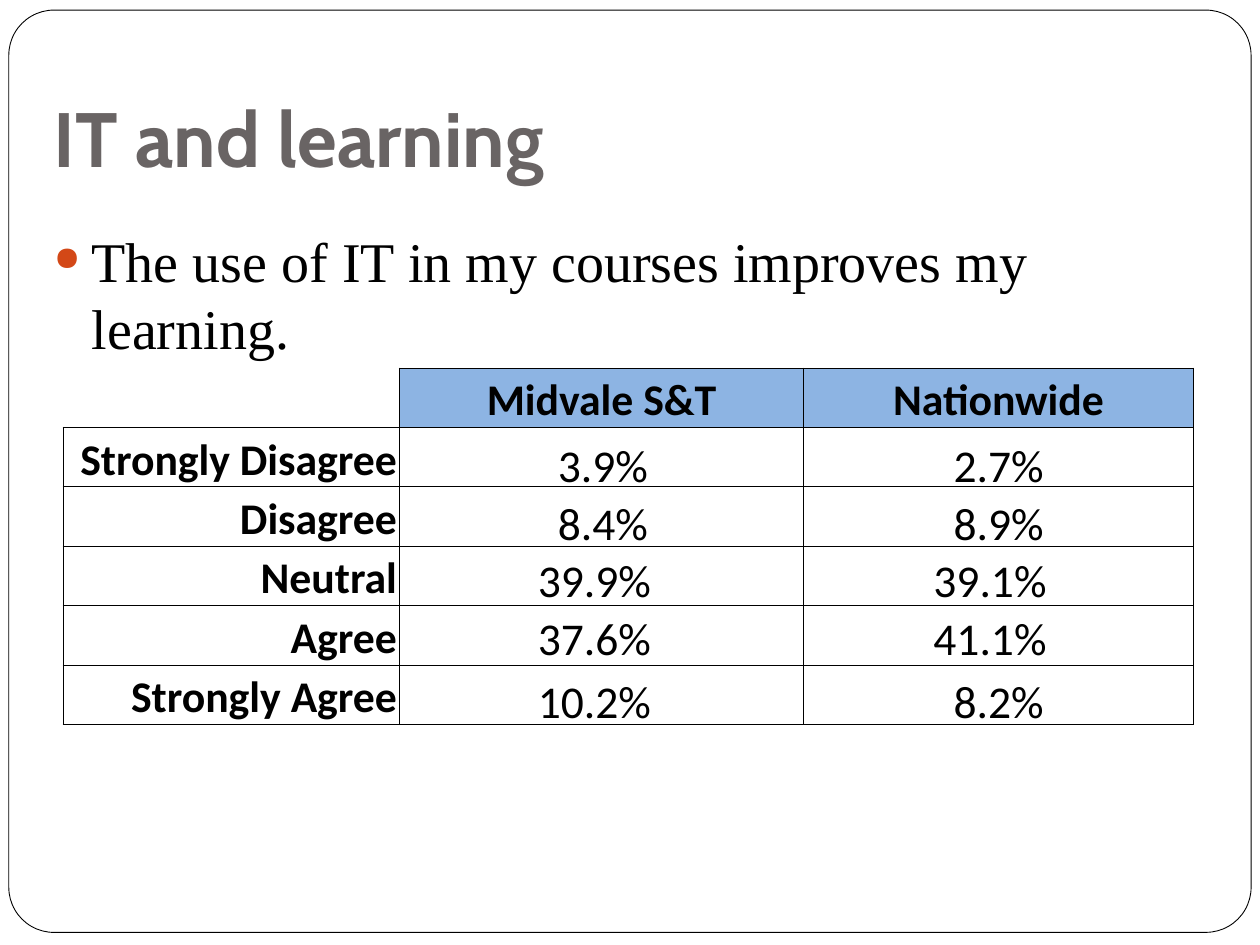
from dataclasses import dataclass

from lxml.etree import SubElement
from pptx import Presentation
from pptx.dml.color import RGBColor
from pptx.enum.shapes import MSO_SHAPE
from pptx.enum.text import MSO_ANCHOR, PP_ALIGN
from pptx.oxml.ns import qn
from pptx.util import Inches, Pt


@dataclass(frozen=True)
class Theme:
    background: str = "FFFFFF"
    ink: str = "000000"
    title: str = "696464"
    bullet: str = "D34817"
    header: str = "8DB4E3"
    title_size: float = 44
    body_size: float = 32
    label_size: float = 25
    value_size: float = 26
    line_width: float = 0.5


@dataclass(frozen=True)
class TextStyle:
    font: str
    size: float
    color: str
    bold: bool = False


@dataclass(frozen=True)
class Box:
    left: float
    top: float
    width: float
    height: float

    def lengths(self) -> list:
        return [Inches(value) for value in (self.left, self.top, self.width, self.height)]


@dataclass(frozen=True)
class Answer:
    label: str
    campus: str
    nationwide: str
    left: float
    top: float
    tab_stop: float


THEME = Theme()
TITLE = TextStyle("Cabin", THEME.title_size, THEME.title, True)
BODY = TextStyle("Times New Roman", THEME.body_size, THEME.ink)
LABEL = TextStyle("Calibri", THEME.label_size, THEME.ink, True)
VALUE = TextStyle("Calibri", THEME.value_size, THEME.ink)

HEADINGS = ("", "Midvale S&T", "Nationwide")
ANSWERS = (
    Answer("Strongly Disagree", "3.9%", "2.7%", 4.33, 3.42, 3.14),
    Answer("Disagree", "8.4%", "8.9%", 4.33, 3.88, 3.14),
    Answer("Neutral", "39.9%", "39.1%", 4.17, 4.33, 3.14),
    Answer("Agree", "37.6%", "41.1%", 4.17, 4.79, 3.14),
    Answer("Strongly Agree", "10.2%", "8.2%", 4.17, 5.29, 3.3),
)
COLUMN_WIDTHS = (2.67, 3.21, 3.09)
TABLE_BOX = Box(0.5, 2.92, sum(COLUMN_WIDTHS), 2.83)


def set_attributes(target, values: dict) -> None:
    for name, value in values.items():
        setattr(target, name, value)


def write(paragraph, text: str, style: TextStyle) -> None:
    run = paragraph.add_run()
    run.text = text
    set_attributes(run.font, {"name": style.font, "size": Pt(style.size), "bold": style.bold})
    run.font.color.rgb = RGBColor.from_string(style.color)


def add_frame(slide, box: Box) -> None:
    shape = slide.shapes.add_shape(MSO_SHAPE.ROUNDED_RECTANGLE, *box.lengths())
    shape.adjustments[0] = 0.049
    shape.shadow.inherit = False
    shape.fill.solid()
    shape.fill.fore_color.rgb = RGBColor.from_string(THEME.background)
    shape.line.color.rgb = RGBColor.from_string(THEME.ink)
    shape.line.width = Pt(THEME.line_width)


def add_text(slide, box: Box, text: str, style: TextStyle, frame_format: dict):
    text_frame = slide.shapes.add_textbox(*box.lengths()).text_frame
    set_attributes(text_frame, {"word_wrap": True, **frame_format})
    paragraph = text_frame.paragraphs[0]
    write(paragraph, text, style)
    return paragraph


def add_bullet(paragraph) -> None:
    paragraph.space_before = Pt(5.8)
    properties = paragraph._p.get_or_add_pPr()
    properties.set("marL", str(Inches(0.3)))
    properties.set("indent", str(-Inches(0.3)))
    color = SubElement(properties, qn("a:buClr"))
    SubElement(color, qn("a:srgbClr"), val=THEME.bullet)
    SubElement(properties, qn("a:buSzPct"), val="60000")
    SubElement(properties, qn("a:buChar"), char="●")


def set_borders(cell, visible_sides: str) -> None:
    properties = cell._tc.get_or_add_tcPr()
    for side in "LRTB":
        line = SubElement(properties, qn(f"a:ln{side}"), w=str(Pt(THEME.line_width)))
        if side in visible_sides:
            fill = SubElement(line, qn("a:solidFill"))
            SubElement(fill, qn("a:srgbClr"), val=THEME.ink)
        else:
            SubElement(line, qn("a:noFill"))


def format_cell(cell, text: str, row: int, column: int) -> None:
    set_attributes(cell, {
        "vertical_anchor": MSO_ANCHOR.BOTTOM,
        "margin_left": Inches(0.02),
        "margin_right": Inches(0.02),
        "margin_top": Inches(0.02),
        "margin_bottom": 0,
    })
    is_corner = row == 0 and column == 0
    set_borders(cell, "RB" if is_corner else "LRTB")
    if row == 0 and not is_corner:
        cell.fill.solid()
        cell.fill.fore_color.rgb = RGBColor.from_string(THEME.header)
    else:
        cell.fill.background()
    if text:
        paragraph = cell.text_frame.paragraphs[0]
        paragraph.alignment = PP_ALIGN.RIGHT if column == 0 else PP_ALIGN.CENTER
        write(paragraph, text, LABEL)


def add_answer_table(slide) -> None:
    rows = [HEADINGS] + [(answer.label, "", "") for answer in ANSWERS]
    table = slide.shapes.add_table(len(rows), len(HEADINGS), *TABLE_BOX.lengths()).table
    set_attributes(table, {"first_row": False, "horz_banding": False})
    for column, width in zip(table.columns, COLUMN_WIDTHS):
        column.width = Inches(width)
    for row_index, texts in enumerate(rows):
        table.rows[row_index].height = Inches(TABLE_BOX.height / len(rows))
        for column_index, text in enumerate(texts):
            format_cell(table.cell(row_index, column_index), text, row_index, column_index)


def add_answer_values(slide, answer: Answer) -> None:
    paragraph = add_text(slide, Box(answer.left, answer.top, 6.83, 0.54),
                         f"{answer.campus}\t{answer.nationwide}", VALUE,
                         {"vertical_anchor": MSO_ANCHOR.TOP})
    tabs = SubElement(paragraph._p.get_or_add_pPr(), qn("a:tabLst"))
    SubElement(tabs, qn("a:tab"), pos=str(Inches(answer.tab_stop)), algn="l")


def main() -> None:
    presentation = Presentation()
    set_attributes(presentation, {"slide_width": Inches(10), "slide_height": Inches(7.5)})
    slide = presentation.slides.add_slide(presentation.slide_layouts[6])
    add_frame(slide, Box(0.07, 0.08, 9.86, 7.32))
    add_text(slide, Box(0.33, 0.3, 8.5, 1.25), "IT and learning", TITLE,
             {"vertical_anchor": MSO_ANCHOR.BOTTOM, "margin_bottom": Inches(0.1)})
    statement = add_text(slide, Box(0.33, 1.75, 9.42, 5),
                         "The use of IT in my courses improves my learning.", BODY,
                         {"vertical_anchor": MSO_ANCHOR.TOP})
    add_bullet(statement)
    add_answer_table(slide)
    for answer in ANSWERS:
        add_answer_values(slide, answer)
    presentation.save("out.pptx")


if __name__ == "__main__":
    main()
